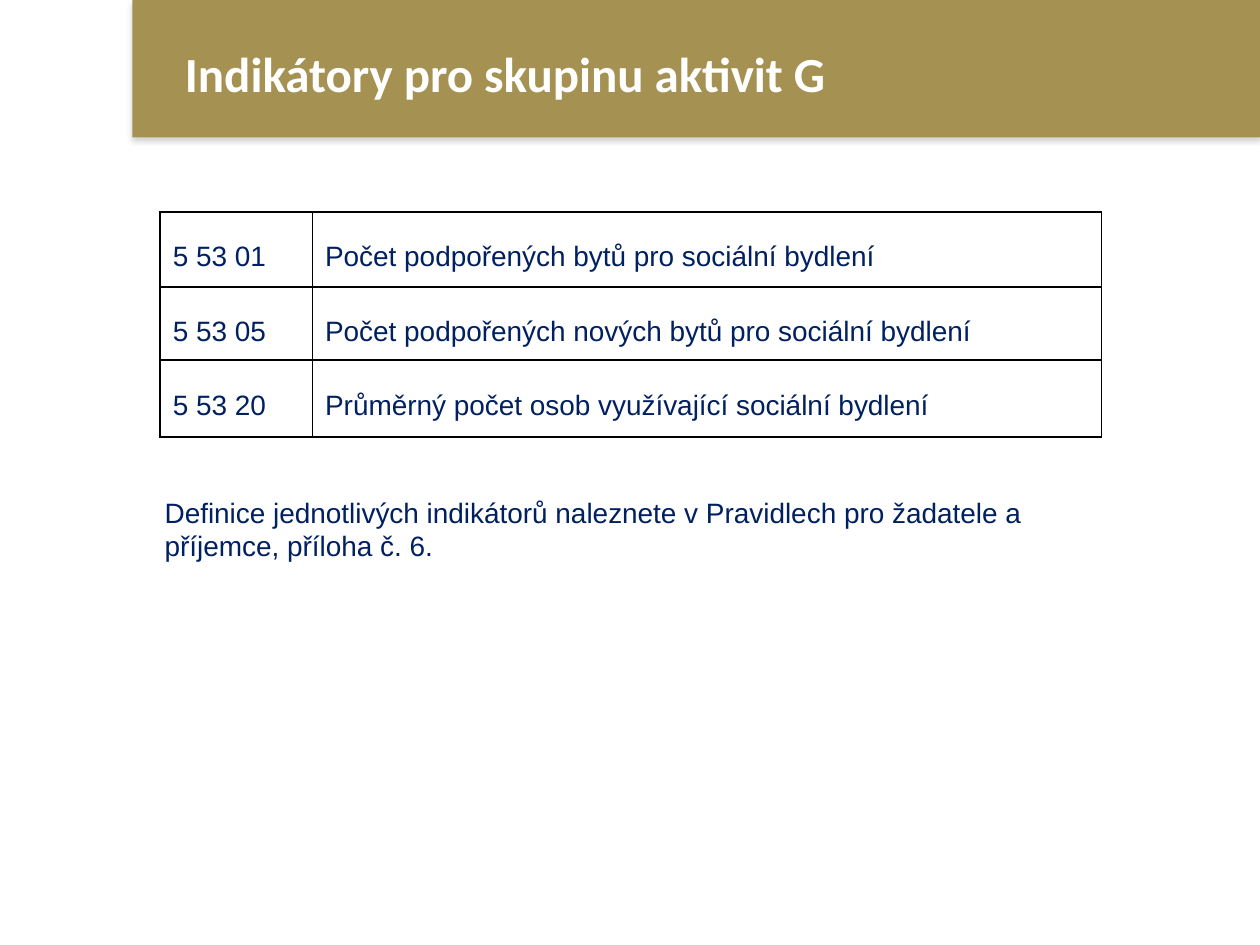
"""Build the slide listing the indicators for activity group G."""
from dataclasses import dataclass

from lxml.etree import SubElement
from pptx import Presentation
from pptx.dml.color import RGBColor
from pptx.enum.shapes import MSO_SHAPE as Preset
from pptx.enum.text import MSO_ANCHOR as Anchor, MSO_AUTO_SIZE as AutoSize
from pptx.oxml import parse_xml
from pptx.oxml.ns import nsdecls, qn
from pptx.slide import Slide
from pptx.table import _Cell as Cell
from pptx.text.text import TextFrame
from pptx.util import Cm, Pt


@dataclass(frozen=True)
class TextStyle:
    font: str
    size: int
    color: str
    bold: bool = False


@dataclass(frozen=True)
class Theme:
    band: str = "A59253"
    shadow: str = "808080"
    border: str = "000000"
    border_width: int = 1
    title: TextStyle = TextStyle("Calibri", 28, "FFFFFF", True)
    body: TextStyle = TextStyle("Arial", 16, "002060")


@dataclass(frozen=True)
class Box:
    left: float
    top: float
    width: float
    height: float

    def lengths(self) -> tuple[Cm, Cm, Cm, Cm]:
        return Cm(self.left), Cm(self.top), Cm(self.width), Cm(self.height)


@dataclass(frozen=True)
class Indicator:
    code: str
    name: str
    height: float


THEME = Theme()
COLUMN_WIDTHS = (3.07, 15.9)
INDICATORS = (
    Indicator("5 53 01", "Počet podpořených bytů pro sociální bydlení", 1.52),
    Indicator("5 53 05", "Počet podpořených nových bytů pro sociální bydlení", 1.47),
    Indicator("5 53 20", "Průměrný počet osob využívající sociální bydlení", 1.55),
)
NOTE = (
    "Definice jednotlivých indikátorů naleznete v Pravidlech pro žadatele a "
    "příjemce, příloha č. 6."
)


def write_text(frame: TextFrame, text: str, style: TextStyle, spacing: float = 1.0) -> None:
    paragraph = frame.paragraphs[0]
    paragraph.line_spacing = spacing
    run = paragraph.add_run()
    run.text = text
    run.font.name = style.font
    run.font.size = Pt(style.size)
    run.font.bold = style.bold
    run.font.color.rgb = RGBColor.from_string(style.color)


def add_band(slide: Slide, box: Box) -> None:
    shape = slide.shapes.add_shape(Preset.RECTANGLE, *box.lengths())
    shape.fill.solid()
    shape.fill.fore_color.rgb = RGBColor.from_string(THEME.band)
    shape.line.fill.background()
    shape.shadow.inherit = False
    effects = shape._element.spPr.find(qn("a:effectLst"))
    effects.append(parse_xml(
        f'<a:outerShdw {nsdecls("a")} blurRad="{Pt(3.1)}" dist="{Pt(1.8)}" '
        f'dir="5400000" rotWithShape="0"><a:srgbClr val="{THEME.shadow}">'
        '<a:alpha val="35000"/></a:srgbClr></a:outerShdw>'
    ))


def add_text(slide: Slide, box: Box, text: str, style: TextStyle,
             anchor: Anchor, spacing: float = 1.0, grow: bool = False) -> None:
    frame = slide.shapes.add_textbox(*box.lengths()).text_frame
    frame.word_wrap = True
    frame.vertical_anchor = anchor
    frame.auto_size = AutoSize.SHAPE_TO_FIT_TEXT if grow else AutoSize.NONE
    write_text(frame, text, style, spacing)


def style_cell(cell: Cell) -> None:
    properties = cell._tc.get_or_add_tcPr()
    for side in ("lnL", "lnR", "lnT", "lnB"):
        line = SubElement(properties, qn(f"a:{side}"), w=str(Pt(THEME.border_width)))
        fill = SubElement(line, qn("a:solidFill"))
        SubElement(fill, qn("a:srgbClr"), val=THEME.border)
    cell.fill.background()
    cell.vertical_anchor = Anchor.MIDDLE


def add_indicator_table(slide: Slide, left: float, top: float) -> None:
    box = Box(left, top, sum(COLUMN_WIDTHS), sum(item.height for item in INDICATORS))
    table = slide.shapes.add_table(
        len(INDICATORS), len(COLUMN_WIDTHS), *box.lengths()
    ).table
    table.first_row = False
    table.horz_banding = False
    for column, width in zip(table.columns, COLUMN_WIDTHS):
        column.width = Cm(width)
    for row, item in zip(table.rows, INDICATORS):
        row.height = Cm(item.height)
        for cell, text in zip(row.cells, (item.code, item.name)):
            style_cell(cell)
            write_text(cell.text_frame, text, THEME.body, 1.5)


def main() -> None:
    presentation = Presentation()
    presentation.slide_width = Cm(25.4)
    presentation.slide_height = Cm(19.05)
    slide = presentation.slides.add_slide(presentation.slide_layouts[6])
    add_band(slide, Box(2.67, 0, 22.73, 2.77))
    add_text(slide, Box(3.48, 0.15, 21.18, 2.79), "Indikátory pro skupinu aktivit G",
             THEME.title, Anchor.MIDDLE, spacing=0.9)
    add_indicator_table(slide, 3.23, 4.27)
    add_text(slide, Box(3.07, 9.86, 19.25, 1.63), NOTE,
             THEME.body, Anchor.TOP, grow=True)
    presentation.save("out.pptx")


if __name__ == "__main__":
    main()
